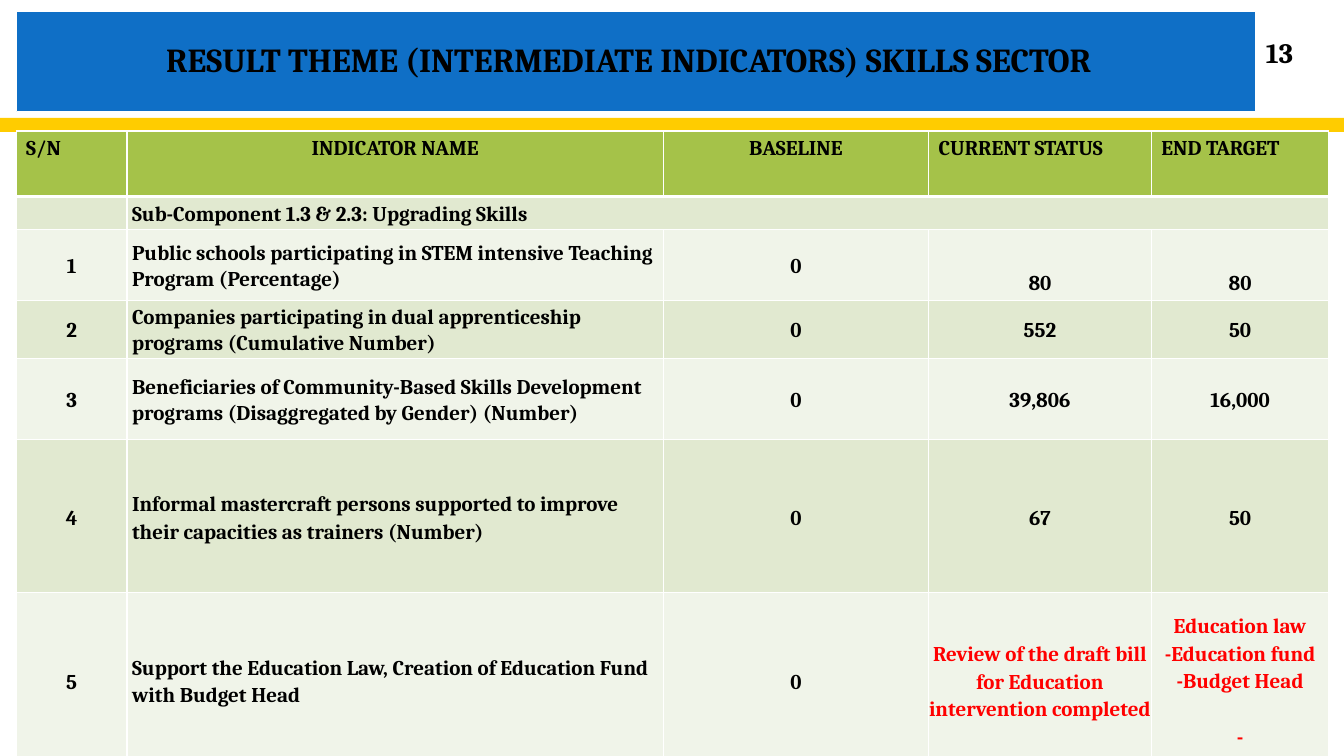
from dataclasses import dataclass

from lxml import etree
from pptx import Presentation
from pptx.dml.color import RGBColor
from pptx.enum.shapes import MSO_SHAPE
from pptx.enum.text import MSO_ANCHOR, MSO_AUTO_SIZE, PP_ALIGN
from pptx.oxml.ns import qn
from pptx.util import Inches, Pt

RECTANGLE = MSO_SHAPE.RECTANGLE
TOP, MIDDLE = MSO_ANCHOR.TOP, MSO_ANCHOR.MIDDLE
LEFT, CENTER = PP_ALIGN.LEFT, PP_ALIGN.CENTER
NO_AUTOFIT = MSO_AUTO_SIZE.NONE


@dataclass(frozen=True)
class Theme:
    font: str = "Cambria"
    title_size: int = 24
    number_size: int = 20
    table_size: int = 15
    text: str = "000000"
    alert: str = "FF0000"
    banner: str = "0F6FC6"
    rule: str = "FFCC00"
    border: str = "FFFFFF"
    header: str = "A5C249"
    dark_band: str = "E1E9D0"
    light_band: str = "F0F4E9"


THEME = Theme()

COLUMN_WIDTHS = [1.1, 5.32, 2.63, 2.21, 1.76]
ROW_HEIGHTS = [0.65, 0.33, 0.7, 0.58, 0.8, 1.52, 1.73]
HEADINGS = ["S/N", "INDICATOR NAME", "BASELINE", "CURRENT STATUS", "END TARGET"]
HEADING_ALIGNMENTS = [LEFT, CENTER, CENTER, LEFT, LEFT]
SUBCOMPONENT = "Sub-Component 1.3 & 2.3: Upgrading Skills"
INDICATORS = [
    ["Public schools participating in STEM intensive Teaching Program (Percentage)",
     "0", "80", "80"],
    ["Companies participating in dual apprenticeship programs (Cumulative Number)",
     "0", "552", "50"],
    ["Beneficiaries of Community-Based Skills Development programs "
     "(Disaggregated by Gender) (Number)", "0", "39,806", "16,000"],
    ["Informal mastercraft persons supported to improve their capacities as "
     "trainers (Number)", "0", "67", "50"],
    ["Support the Education Law, Creation of Education Fund with Budget Head",
     "0", "Review of the draft bill for Education intervention completed",
     "Education law -Education fund\n-Budget Head\n-"],
]
FIRST_INDICATOR_ROW = 2
NAME_COLUMN, STATUS_COLUMN = 1, 3


def color(value):
    return RGBColor.from_string(value)


def write(frame, text, size, ink=THEME.text, align=CENTER, spacing=1.0):
    frame.text = text
    for paragraph in frame.paragraphs:
        paragraph.alignment = align
        paragraph.line_spacing = spacing
        for run in paragraph.runs:
            run.font.name = THEME.font
            run.font.size = Pt(size)
            run.font.bold = True
            run.font.color.rgb = color(ink)


def add_rule(slide):
    rule = slide.shapes.add_shape(
        RECTANGLE, Inches(0), Inches(1.17), Inches(13.33), Inches(0.14))
    rule.shadow.inherit = False
    rule.fill.solid()
    rule.fill.fore_color.rgb = color(THEME.rule)
    rule.line.fill.background()


def format_title(slide):
    title = slide.shapes.title
    title.left, title.top = Inches(0.16), Inches(0.11)
    title.width, title.height = Inches(12.29), Inches(1)
    title.fill.solid()
    title.fill.fore_color.rgb = color(THEME.banner)
    title.line.color.rgb = color(THEME.border)
    title.line.width = Pt(0.75)
    frame = title.text_frame
    frame.auto_size = NO_AUTOFIT
    frame.vertical_anchor = MIDDLE
    frame.margin_right = Inches(0.24)
    write(frame, "RESULT THEME (INTERMEDIATE INDICATORS) SKILLS SECTOR",
          THEME.title_size, spacing=0.9)


def add_page_number(slide):
    box = slide.shapes.add_textbox(
        Inches(12.2), Inches(0.32), Inches(0.98), Inches(0.4))
    box.text_frame.word_wrap = True
    box.text_frame.vertical_anchor = MIDDLE
    write(box.text_frame, "13", THEME.number_size)


def style_cell(cell, fill, bottom_width=1):
    properties = cell._tc.get_or_add_tcPr()
    for side, width in (("L", 1), ("R", 1), ("T", 1), ("B", bottom_width)):
        line = etree.SubElement(properties, qn(f"a:ln{side}"), w=str(Pt(width)))
        solid = etree.SubElement(line, qn("a:solidFill"))
        etree.SubElement(solid, qn("a:srgbClr"), val=THEME.border)
    cell.fill.solid()
    cell.fill.fore_color.rgb = color(fill)


def set_insets(cell, side, top=0.01):
    cell.vertical_anchor = MIDDLE
    cell.margin_left = cell.margin_right = Inches(side)
    cell.margin_top, cell.margin_bottom = Inches(top), Inches(0)


def fill_header(table):
    for column, (heading, align) in enumerate(zip(HEADINGS, HEADING_ALIGNMENTS)):
        cell = table.cell(0, column)
        style_cell(cell, THEME.header, bottom_width=3)
        cell.vertical_anchor = TOP
        write(cell.text_frame, heading, THEME.table_size, align=align)


def fill_subcomponent(table):
    for column in range(len(HEADINGS)):
        cell = table.cell(1, column)
        style_cell(cell, THEME.dark_band)
        set_insets(cell, 0.05)
    name = table.cell(1, NAME_COLUMN)
    name.merge(table.cell(1, len(HEADINGS) - 1))
    write(name.text_frame, SUBCOMPONENT, THEME.table_size, align=LEFT, spacing=1.07)


def fill_indicators(table):
    last = len(INDICATORS)
    for number, indicator in enumerate(INDICATORS, 1):
        row = FIRST_INDICATOR_ROW + number - 1
        band = THEME.light_band if number % 2 else THEME.dark_band
        for column, text in enumerate([str(number), *indicator]):
            cell = table.cell(row, column)
            is_name = column == NAME_COLUMN
            is_result = column >= STATUS_COLUMN
            style_cell(cell, band)
            # The first indicator's results sit low in their row.
            set_insets(cell, 0.05 if is_name else 0.01,
                       top=0.36 if is_result and number == 1 else 0.01)
            if column == STATUS_COLUMN:
                cell.margin_left = cell.margin_right = Inches(0)
            write(cell.text_frame, text, THEME.table_size,
                  ink=THEME.alert if is_result and number == last else THEME.text,
                  align=LEFT if is_name else CENTER,
                  spacing=1.15 if number >= last - 1 else 1.07)
    open_item = table.cell(len(ROW_HEIGHTS) - 1, len(HEADINGS) - 1)
    open_item.text_frame.paragraphs[-1].space_before = Pt(20)


def add_indicator_table(slide):
    table = slide.shapes.add_table(
        len(ROW_HEIGHTS), len(COLUMN_WIDTHS), Inches(0.16), Inches(1.3),
        Inches(sum(COLUMN_WIDTHS)), Inches(sum(ROW_HEIGHTS))).table
    for column, width in zip(table.columns, COLUMN_WIDTHS):
        column.width = Inches(width)
    for row, height in zip(table.rows, ROW_HEIGHTS):
        row.height = Inches(height)
    fill_header(table)
    fill_subcomponent(table)
    fill_indicators(table)


def main():
    presentation = Presentation()
    presentation.slide_width = Inches(13.33)
    presentation.slide_height = Inches(7.5)
    slide = presentation.slides.add_slide(presentation.slide_layouts[5])
    format_title(slide)
    add_rule(slide)
    add_indicator_table(slide)
    add_page_number(slide)
    presentation.save("out.pptx")


if __name__ == "__main__":
    main()
